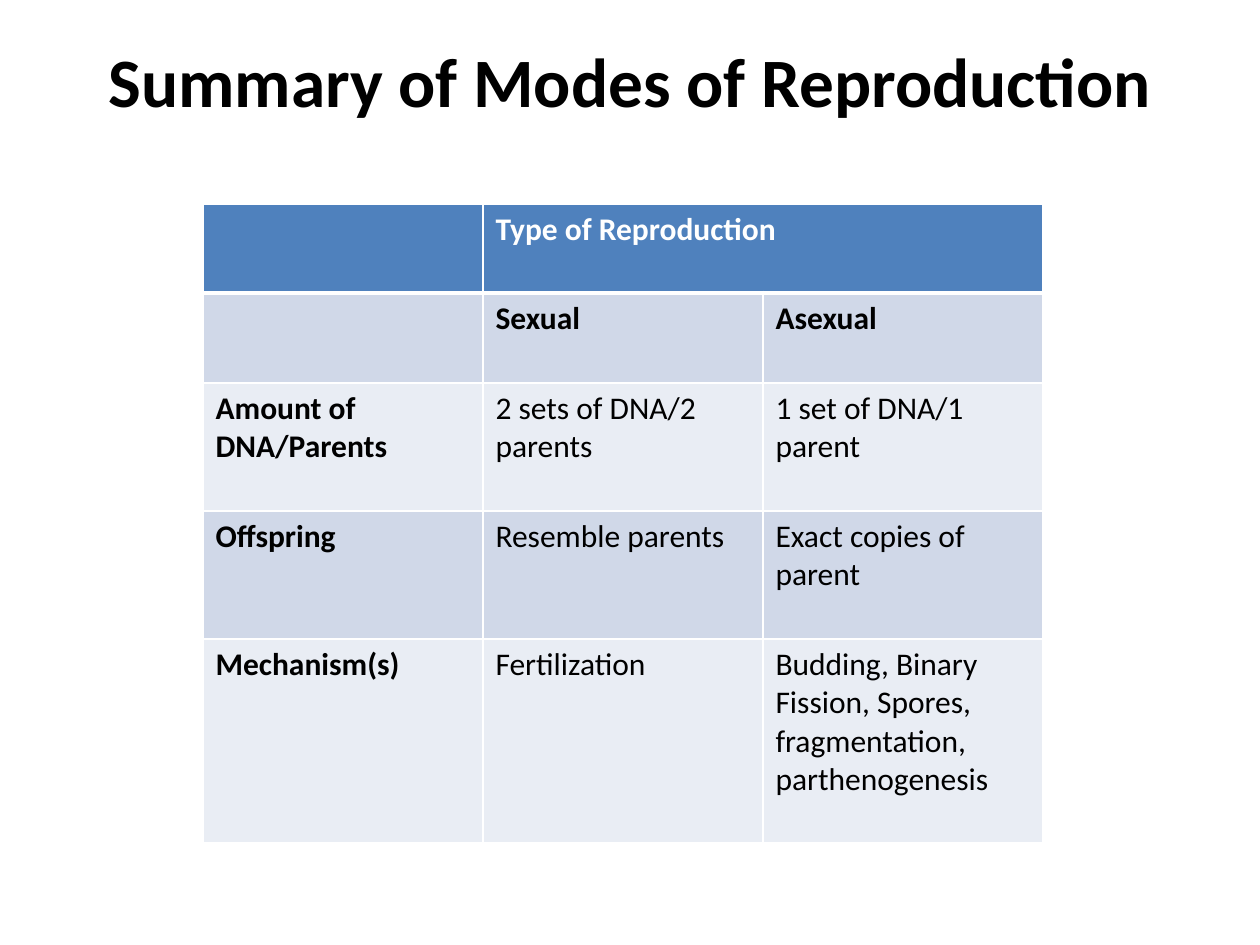
from lxml.etree import SubElement
from pptx import Presentation
from pptx.dml.color import RGBColor
from pptx.enum.text import MSO_ANCHOR, PP_ALIGN
from pptx.oxml.ns import qn
from pptx.util import Pt

SCALE = 914400 / 126
FONT = "Calibri"
HEAD, BANDS = "4F81BD", ("D0D8E8", "E9EDF4")
ROWS = [
    ("", "Type of Reproduction", ""),
    ("", "Sexual", "Asexual"),
    ("Amount of DNA/Parents", "2 sets of DNA/2 parents", "1 set of DNA/1 parent"),
    ("Offspring", "Resemble parents", "Exact copies of parent"),
    ("Mechanism(s)", "Fertilization",
     "Budding, Binary Fission, Spores, fragmentation, parthenogenesis"),
]
HEIGHTS = (89, 90, 128, 128, 204)


def px(n):
    return round(n * SCALE)


def color(code):
    return RGBColor.from_string(code)


def style(para, size, code, bold):
    font = para.font
    font.name, font.size, font.bold = FONT, Pt(size), bold
    font.color.rgb = color(code)


def edge(cell, side, width):
    """Draw a white border on one side (L, R, T or B); call before the fill."""
    line = SubElement(cell._tc.get_or_add_tcPr(), qn(f"a:ln{side}"), w=str(Pt(width)))
    fill = SubElement(line, qn("a:solidFill"))
    SubElement(fill, qn("a:srgbClr"), val="FFFFFF")


def title(slide, box, text):
    frame = slide.shapes.add_textbox(*map(px, box)).text_frame
    frame.word_wrap = True
    frame.vertical_anchor = MSO_ANCHOR.TOP
    frame.margin_top = 0
    para = frame.paragraphs[0]
    para.text = text
    para.alignment = PP_ALIGN.CENTER
    style(para, 39.6, "000000", True)


def grid(slide, box):
    table = slide.shapes.add_table(len(ROWS), len(ROWS[0]), *map(px, box)).table
    table.horz_banding = False
    for col in table.columns:
        col.width = px(box[2] / len(ROWS[0]))
    for r, (texts, height) in enumerate(zip(ROWS, HEIGHTS)):
        table.rows[r].height = px(height)
        for c, text in enumerate(texts):
            cell = table.cell(r, c)
            for side in "LRTB":
                thick = (r, side) in ((0, "B"), (1, "T"))
                edge(cell, side, 3 if thick else 1)
            cell.fill.solid()
            cell.fill.fore_color.rgb = color(BANDS[(r - 1) % 2] if r else HEAD)
            para = cell.text_frame.paragraphs[0]
            para.text = text
            style(para, 18, "000000" if r else "FFFFFF", r < 2 or c == 0)
    table.cell(0, 1).merge(table.cell(0, 2))


def main():
    deck = Presentation()
    deck.slide_width, deck.slide_height = px(1260), px(945)
    slide = deck.slides.add_slide(deck.slide_layouts[6])
    title(slide, (63, 38, 1134, 157), "Summary of Modes of Reproduction")
    grid(slide, (203, 204, 840, sum(HEIGHTS)))
    deck.save("out.pptx")


if __name__ == "__main__":
    main()
